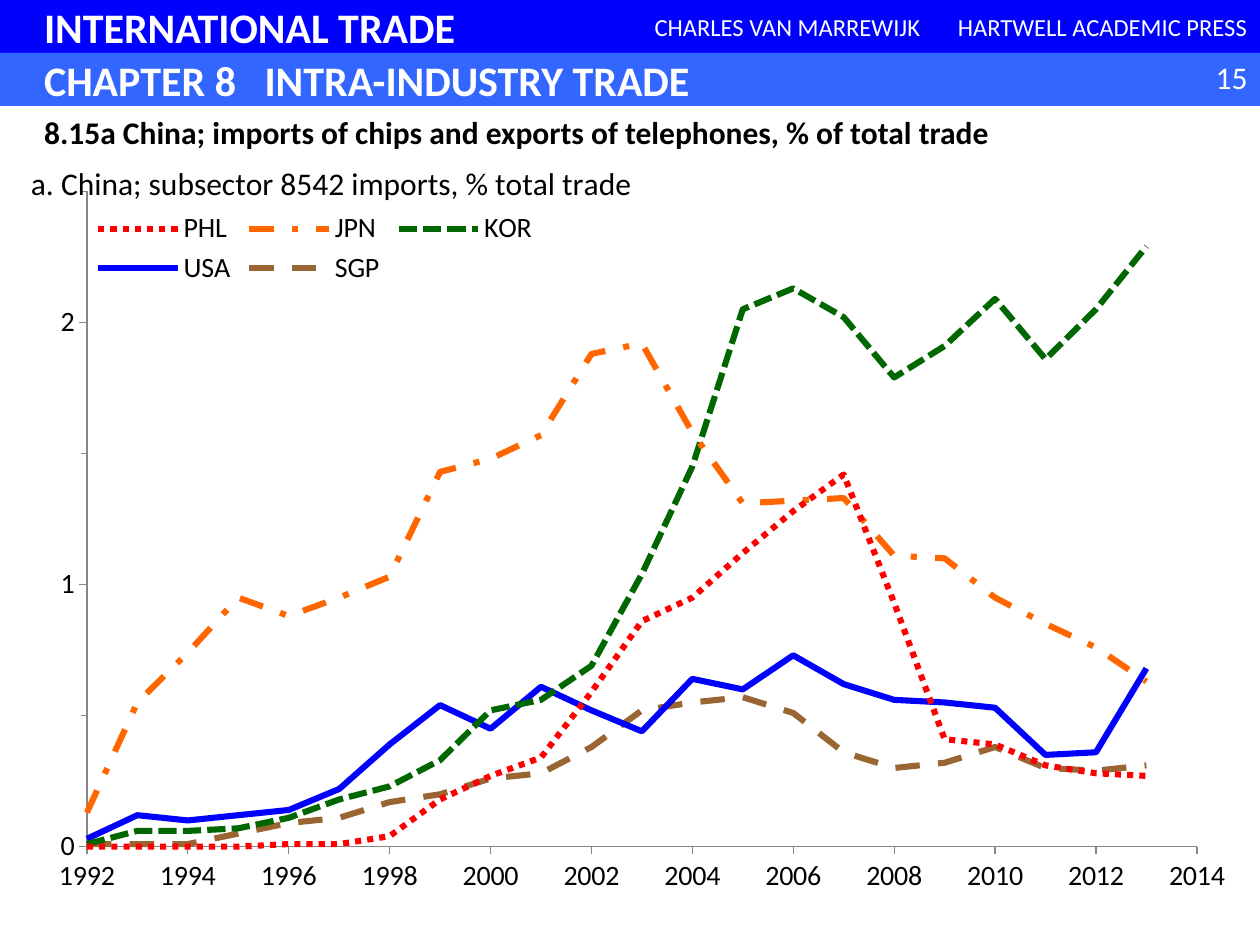
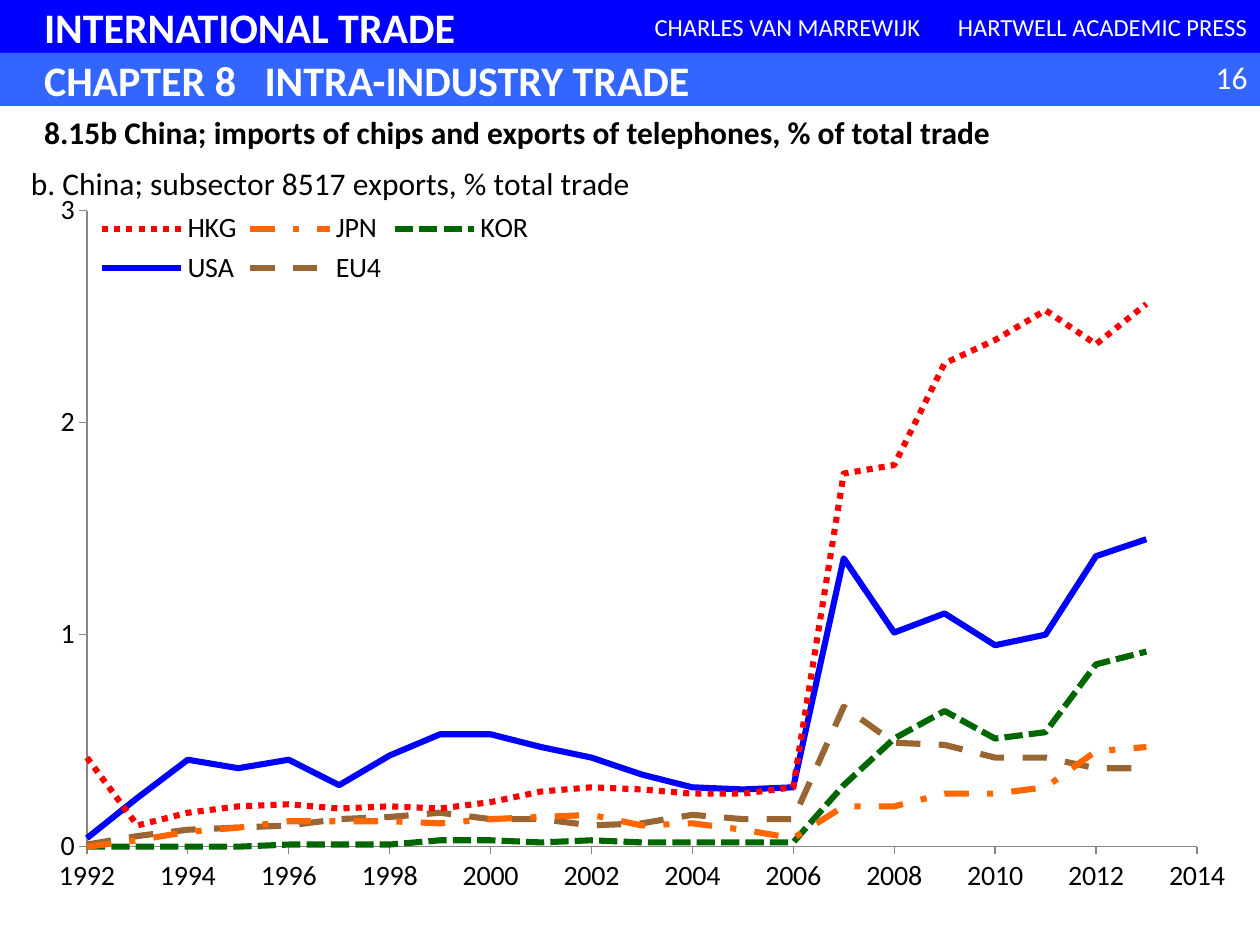
import pptx
import pptx.chart.data
import pptx.dml.color
import pptx.enum.chart
import pptx.enum.dml
import pptx.enum.shapes
import pptx.enum.text
import pptx.oxml
import pptx.oxml.ns
import pptx.util

WIDTH, HEIGHT = pptx.util.Inches(10), pptx.util.Inches(7.5)
BAND = 0.056  # height of one header band, as a share of the slide
FONT = "Calibri"
COLOURS = {
    "book": "0000FF", "chapter": "3366FF", "white": "FFFFFF", "text": "000000",
    "axis": "868686", "red": "FF0000", "orange": "FF6600", "green": "006600",
    "blue": "0000FF", "brown": "996633",
}
DASH = pptx.enum.dml.MSO_LINE
COUNTRY_STYLES = [
    ("red", DASH.ROUND_DOT), ("orange", DASH.DASH_DOT), ("green", DASH.SQUARE_DOT),
    ("blue", DASH.SOLID), ("brown", DASH.DASH),
]
ALIGN = pptx.enum.text.PP_ALIGN
YEARS = range(1992, 2014)

CHIP_IMPORTS = {
    "PHL": [0, 0, 0, 0, 0.01, 0.01, 0.04, 0.18, 0.27, 0.34, 0.59,
            0.86, 0.95, 1.12, 1.28, 1.42, 0.93, 0.41, 0.39, 0.31, 0.28, 0.27],
    "JPN": [0.13, 0.55, 0.74, 0.95, 0.88, 0.95, 1.03, 1.43, 1.48, 1.57, 1.88,
            1.92, 1.58, 1.31, 1.32, 1.33, 1.11, 1.1, 0.95, 0.85, 0.76, 0.63],
    "KOR": [0.01, 0.06, 0.06, 0.07, 0.11, 0.18, 0.23, 0.33, 0.52, 0.56, 0.69,
            1.04, 1.45, 2.05, 2.13, 2.02, 1.79, 1.91, 2.09, 1.86, 2.05, 2.29],
    "USA": [0.03, 0.12, 0.1, 0.12, 0.14, 0.22, 0.39, 0.54, 0.45, 0.61, 0.52,
            0.44, 0.64, 0.6, 0.73, 0.62, 0.56, 0.55, 0.53, 0.35, 0.36, 0.68],
    "SGP": [0.01, 0.01, 0.01, 0.05, 0.09, 0.11, 0.17, 0.2, 0.26, 0.28, 0.38,
            0.52, 0.55, 0.57, 0.51, 0.36, 0.3, 0.32, 0.38, 0.3, 0.29, 0.31],
}
TELEPHONE_EXPORTS = {
    "HKG": [0.42, 0.1, 0.16, 0.19, 0.2, 0.18, 0.19, 0.18, 0.21, 0.26, 0.28,
            0.27, 0.25, 0.25, 0.28, 1.76, 1.8, 2.28, 2.39, 2.53, 2.37, 2.56],
    "JPN": [0, 0.03, 0.07, 0.09, 0.12, 0.12, 0.12, 0.11, 0.13, 0.14, 0.15,
            0.1, 0.11, 0.08, 0.04, 0.19, 0.19, 0.25, 0.25, 0.28, 0.45, 0.47],
    "KOR": [0, 0, 0, 0, 0.01, 0.01, 0.01, 0.03, 0.03, 0.02, 0.03,
            0.02, 0.02, 0.02, 0.02, 0.29, 0.51, 0.64, 0.51, 0.54, 0.86, 0.92],
    "USA": [0.04, 0.23, 0.41, 0.37, 0.41, 0.29, 0.43, 0.53, 0.53, 0.47, 0.42,
            0.34, 0.28, 0.27, 0.28, 1.36, 1.01, 1.1, 0.95, 1, 1.37, 1.45],
    "EU4": [0.01, 0.05, 0.08, 0.09, 0.1, 0.13, 0.14, 0.16, 0.13, 0.13, 0.1,
            0.11, 0.15, 0.13, 0.13, 0.66, 0.49, 0.48, 0.42, 0.42, 0.37, 0.37],
}


def rgb(name):
    return pptx.dml.color.RGBColor.from_string(COLOURS[name])


def box(left, top, width, height):
    """Turn shares of the slide into lengths."""
    return (round(left * WIDTH), round(top * HEIGHT),
            round(width * WIDTH), round(height * HEIGHT))


def style_font(font, size, colour="text", bold=False):
    font.name = FONT
    font.size = pptx.util.Pt(size)
    font.bold = bold
    font.color.rgb = rgb(colour)


def write(frame, text, size, colour, bold=False, align=ALIGN.LEFT, indent=0.1):
    frame.word_wrap = True
    frame.vertical_anchor = pptx.enum.text.MSO_ANCHOR.MIDDLE
    frame.margin_left = pptx.util.Inches(indent)
    frame.margin_top = frame.margin_bottom = 0
    paragraph = frame.paragraphs[0]
    paragraph.alignment = align
    run = paragraph.add_run()
    run.text = text
    style_font(run.font, size, colour, bold)
    return paragraph


def add_band(slide, place, fill, text, size, **text_style):
    band = slide.shapes.add_shape(pptx.enum.shapes.MSO_SHAPE.RECTANGLE, *box(*place))
    band.shadow.inherit = False
    band.fill.solid()
    band.fill.fore_color.rgb = rgb(fill)
    band.line.fill.background()
    return write(band.text_frame, text, size, "white", **text_style)


def add_header(slide, number):
    add_band(slide, (0, 0, 1, BAND), "book", "INTERNATIONAL TRADE", 24, bold=True, indent=0.35)
    for column, credit in enumerate(["CHARLES VAN MARREWIJK", "HARTWELL ACADEMIC PRESS"], 2):
        add_band(slide, (column / 4, 0, 1 / 4, BAND), "book", credit, 14, align=ALIGN.CENTER)
    chapter = add_band(slide, (0, BAND, 1, BAND), "chapter",
                       "CHAPTER 8\tINTRA-INDUSTRY TRADE", 24, bold=True, indent=0.35)
    chapter._p.get_or_add_pPr().append(pptx.oxml.parse_xml(
        f'<a:tabLst {pptx.oxml.ns.nsdecls("a")}>'
        f'<a:tab pos="{pptx.util.Inches(1.75)}" algn="l"/></a:tabLst>'))
    page = slide.shapes.add_textbox(*box(0.93, BAND, 0.07, 0.05))
    write(page.text_frame, str(number), 18, "white", align=ALIGN.RIGHT)


def set_title(slide, text):
    title = slide.shapes.title
    title.left, title.top, title.width, title.height = box(0.025, 2 * BAND, 0.825, 0.056)
    write(title.text_frame, text, 18, "text", bold=True)
    title.element.getparent().append(title.element)  # in front of the chart


def place_in_chart(element, index, x, y, w=None, h=None, inner=False):
    """Give a chart part a manual layout in shares of the chart."""
    for layout in element.findall(pptx.oxml.ns.qn("c:layout")):
        element.remove(layout)
    target = '<c:layoutTarget val="inner"/>' if inner else ""
    modes = '<c:xMode val="edge"/><c:yMode val="edge"/>'
    sizes = "".join(f'<c:{key} val="{value}"/>'
                    for key, value in zip("xywh", (x, y, w, h)) if value is not None)
    element.insert(index, pptx.oxml.parse_xml(
        f'<c:layout {pptx.oxml.ns.nsdecls("c")}><c:manualLayout>'
        f'{target}{modes}{sizes}</c:manualLayout></c:layout>'))


def style_axis(axis, low, high, step):
    axis.minimum_scale, axis.maximum_scale, axis.major_unit = low, high, step
    axis.has_major_gridlines = axis.has_minor_gridlines = False
    axis.major_tick_mark = pptx.enum.chart.XL_TICK_MARK.OUTSIDE
    axis.minor_tick_mark = pptx.enum.chart.XL_TICK_MARK.NONE
    axis.format.line.color.rgb = rgb("axis")
    axis.format.line.width = pptx.util.Pt(0.75)
    axis.tick_labels.number_format = "0"
    axis.tick_labels.number_format_is_linked = False
    style_font(axis.tick_labels.font, 16)


def add_trade_chart(slide, heading, shares, top_share, plot_top, half_ticks):
    data = pptx.chart.data.XyChartData()
    for country, values in shares.items():
        series = data.add_series(country)
        for year, value in zip(YEARS, values):
            series.add_data_point(year, value)
    chart = slide.shapes.add_chart(
        pptx.enum.chart.XL_CHART_TYPE.XY_SCATTER_LINES_NO_MARKERS,
        *box(0, 2 * BAND, 1, 1 - 2 * BAND), data).chart
    style_font(chart.font, 10)

    chart.has_title = True
    caption = chart.chart_title.text_frame.paragraphs[0].add_run()
    caption.text = heading
    style_font(caption.font, 18)
    place_in_chart(chart.chart_title._element, 1, 0.02, 0.06)

    chart.has_legend = True
    chart.legend.position = pptx.enum.chart.XL_LEGEND_POSITION.BOTTOM
    chart.legend.include_in_layout = False
    style_font(chart.legend.font, 16)
    place_in_chart(chart.legend._element, 1, 0.07, 0.12, 0.36, 0.1)

    style_axis(chart.category_axis, 1992, 2014, 2)
    style_axis(chart.value_axis, 0, top_share, 1)
    if half_ticks:
        chart.value_axis.minor_unit = 0.5
        chart.value_axis.minor_tick_mark = pptx.enum.chart.XL_TICK_MARK.OUTSIDE
    plot = chart.plots[0]
    plot.vary_by_categories = False
    place_in_chart(plot._element.getparent(), 0, 0.069, plot_top, 0.881,
                   round(0.883 - plot_top, 3), inner=True)

    for series, (colour, dash) in zip(plot.series, COUNTRY_STYLES):
        series.smooth = False
        series.format.line.color.rgb = rgb(colour)
        series.format.line.width = pptx.util.Pt(3.5)
        series.format.line.dash_style = dash


def add_trade_slide(deck, number, part, **chart):
    slide = deck.slides.add_slide(deck.slide_layouts[5])
    add_header(slide, number)
    add_trade_chart(slide, **chart)
    set_title(slide, f"8.15{part} China; imports of chips and exports of telephones, "
                     "% of total trade")


def main():
    deck = pptx.Presentation()
    deck.slide_width, deck.slide_height = WIDTH, HEIGHT
    add_trade_slide(deck, 15, "a", heading="a. China; subsector 8542 imports, % total trade",
                    shares=CHIP_IMPORTS, top_share=2.5, plot_top=0.102, half_ticks=True)
    add_trade_slide(deck, 16, "b", heading="b. China; subsector 8517 exports, % total trade",
                    shares=TELEPHONE_EXPORTS, top_share=3, plot_top=0.125, half_ticks=False)
    deck.save("out.pptx")


if __name__ == "__main__":
    main()
